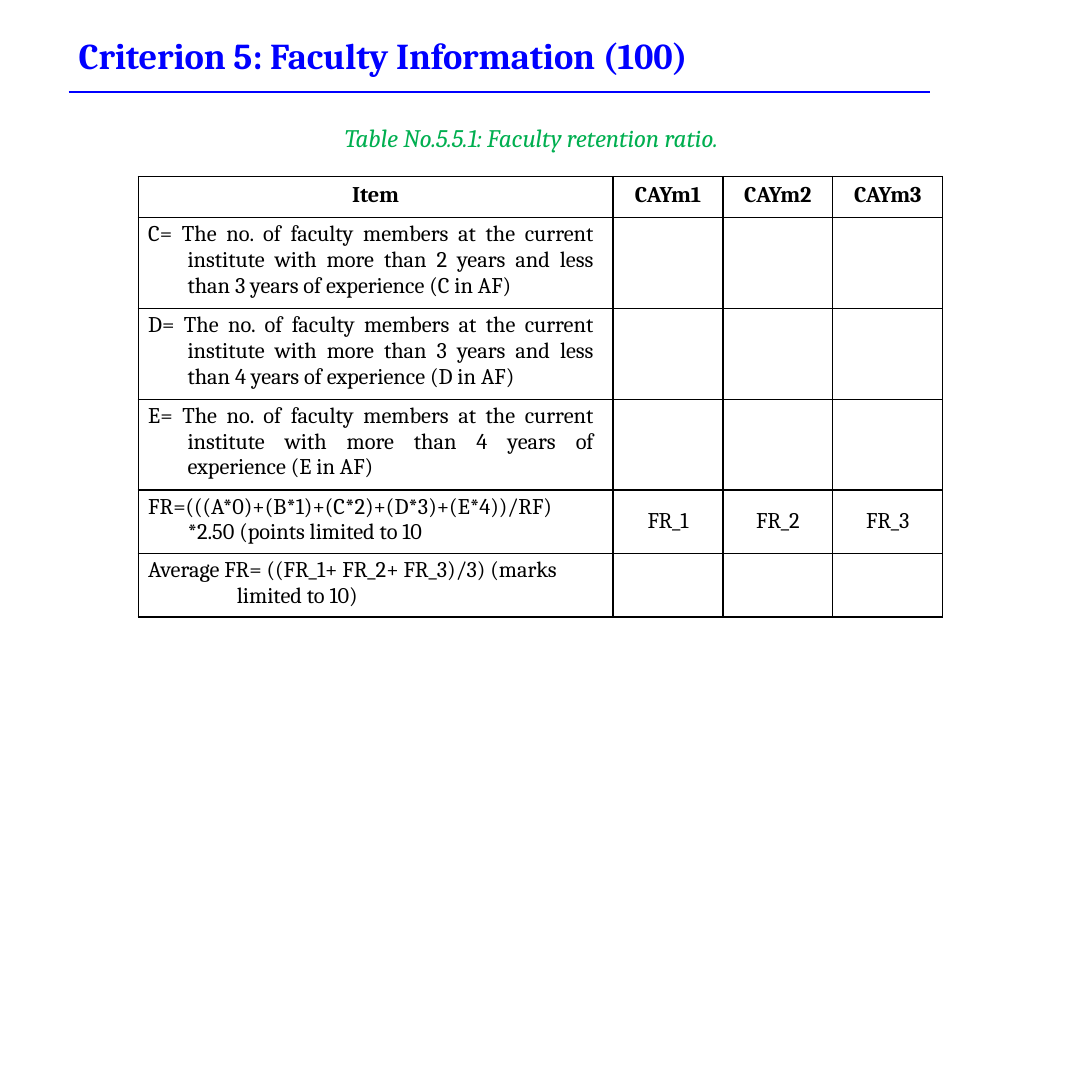
from lxml.etree import SubElement
from pptx import Presentation
from pptx.dml.color import RGBColor
from pptx.enum.shapes import MSO_CONNECTOR
from pptx.enum.text import PP_ALIGN
from pptx.oxml.ns import qn
from pptx.util import Inches, Pt

SIDE = 10.83
BLUE, GREEN, BLACK = "0000FF", "00AF50", "000000"
COLUMNS = [4.71, 1.09, 1.09, 1.09]
ROWS = [0.41, 0.9, 0.9, 0.9, 0.63, 0.63]
HEADINGS = ["Item", "CAYm1", "CAYm2", "CAYm3"]
HANGING, AVERAGE = (0.49, -0.39), (0.98, -0.88)
ITEMS = [
    [("C= The no. of faculty members at the current institute with more than "
      "2 years and less than 3 years of experience (C in AF)", HANGING, PP_ALIGN.JUSTIFY)],
    [("D= The no. of faculty members at the current institute with more than "
      "3 years and less than 4 years of experience (D in AF)", HANGING, PP_ALIGN.JUSTIFY)],
    [("E= The no. of faculty members at the current institute with more than "
      "4 years of experience (E in AF)", HANGING, PP_ALIGN.JUSTIFY)],
    [("FR=(((A*0)+(B*1)+(C*2)+(D*3)+(E*4))/RF)", (0.1, 0), PP_ALIGN.LEFT),
     ("*2.50 (points limited to 10", (0.49, 0), PP_ALIGN.LEFT)],
    [("Average FR= ((FR_1+ FR_2+ FR_3)/3) (marks limited to 10)", AVERAGE, PP_ALIGN.LEFT)],
]
RATIO_ROW = 4


def rgb(color):
    return RGBColor.from_string(color)


def write(p, text, size, color, bold=False, italic=False, align=PP_ALIGN.LEFT,
          indent=(0, 0), spacing=-0.1):
    r = p.add_run()
    r.text = text
    r._r.get_or_add_rPr().set("spc", str(round(spacing * 100)))
    pPr = p._p.get_or_add_pPr()
    pPr.set("marL", str(Inches(indent[0])))
    pPr.set("indent", str(Inches(indent[1])))
    p.alignment = align
    font = p.font
    font.name, font.size, font.bold, font.italic = "Cambria", Pt(size), bold, italic
    font.color.rgb = rgb(color)


def set_margins(frame, top, right=0):
    frame.margin_left = frame.margin_bottom = 0
    frame.margin_top, frame.margin_right = Inches(top), Inches(right)


def add_label(s, box, text, size, color, **style):
    tf = s.shapes.add_textbox(*map(Inches, box)).text_frame
    tf.word_wrap = True
    set_margins(tf, 0.02)
    write(tf.paragraphs[0], text, size, color, indent=(0.01, 0), **style)


def add_heading(s, left, top, width):
    add_label(s, (left + 0.09, top, width, 0.46), "Criterion 5: Faculty Information (100)",
              26, BLUE, bold=True)
    y = Inches(top + 0.6)
    rule = s.shapes.add_connector(MSO_CONNECTOR.STRAIGHT, Inches(left), y,
                                  Inches(left + width), y)
    rule.line.color.rgb, rule.line.width = rgb(BLUE), Pt(1.25)
    SubElement(rule._element.spPr, qn("a:effectLst"))


def add_borders(cell):
    tcPr = cell._tc.get_or_add_tcPr()
    for i, side in enumerate(("lnL", "lnR", "lnT", "lnB")):
        ln = SubElement(tcPr, qn("a:" + side), w=str(Pt(1)))
        fill = SubElement(ln, qn("a:solidFill"))
        SubElement(fill, qn("a:srgbClr"), val=BLACK)
        tcPr.insert(i, ln)


def add_ratio_table(s, left, top):
    table = s.shapes.add_table(len(ROWS), len(COLUMNS), Inches(left), Inches(top),
                               Inches(sum(COLUMNS)), Inches(sum(ROWS))).table
    table.first_row = table.horz_banding = False
    for column, width in zip(table.columns, COLUMNS):
        column.width = Inches(width)
    for row, height in zip(table.rows, ROWS):
        row.height = Inches(height)
    for cell in table.iter_cells():
        cell.fill.background()
        set_margins(cell, 0.04)
        add_borders(cell)

    for c, heading in enumerate(HEADINGS):
        cell = table.cell(0, c)
        set_margins(cell, 0.06)
        write(cell.text_frame.paragraphs[0], heading, 16, BLACK, bold=True,
              align=PP_ALIGN.CENTER)
    for r, item in enumerate(ITEMS, 1):
        cell = table.cell(r, 0)
        set_margins(cell, 0.04, 0.19)
        tf = cell.text_frame
        for i, (text, indent, align) in enumerate(item):
            p = tf.add_paragraph() if i else tf.paragraphs[0]
            write(p, text, 16, BLACK, indent=indent, align=align, spacing=0)
    for c in range(1, len(COLUMNS)):
        cell = table.cell(RATIO_ROW, c)
        set_margins(cell, 0.18)
        write(cell.text_frame.paragraphs[0], f"FR_{c}", 16, BLACK, align=PP_ALIGN.CENTER)


def main():
    prs = Presentation()
    prs.slide_width = prs.slide_height = Inches(SIDE)
    s = prs.slides.add_slide(prs.slide_layouts[6])
    add_heading(s, 0.68, 0.31, 8.54)
    add_label(s, (3.41, 1.19, 4.02, 0.33), "Table No.5.5.1: Faculty retention ratio.",
              18, GREEN, italic=True)
    add_ratio_table(s, 1.37, 1.75)
    prs.save("out.pptx")


if __name__ == "__main__":
    main()
